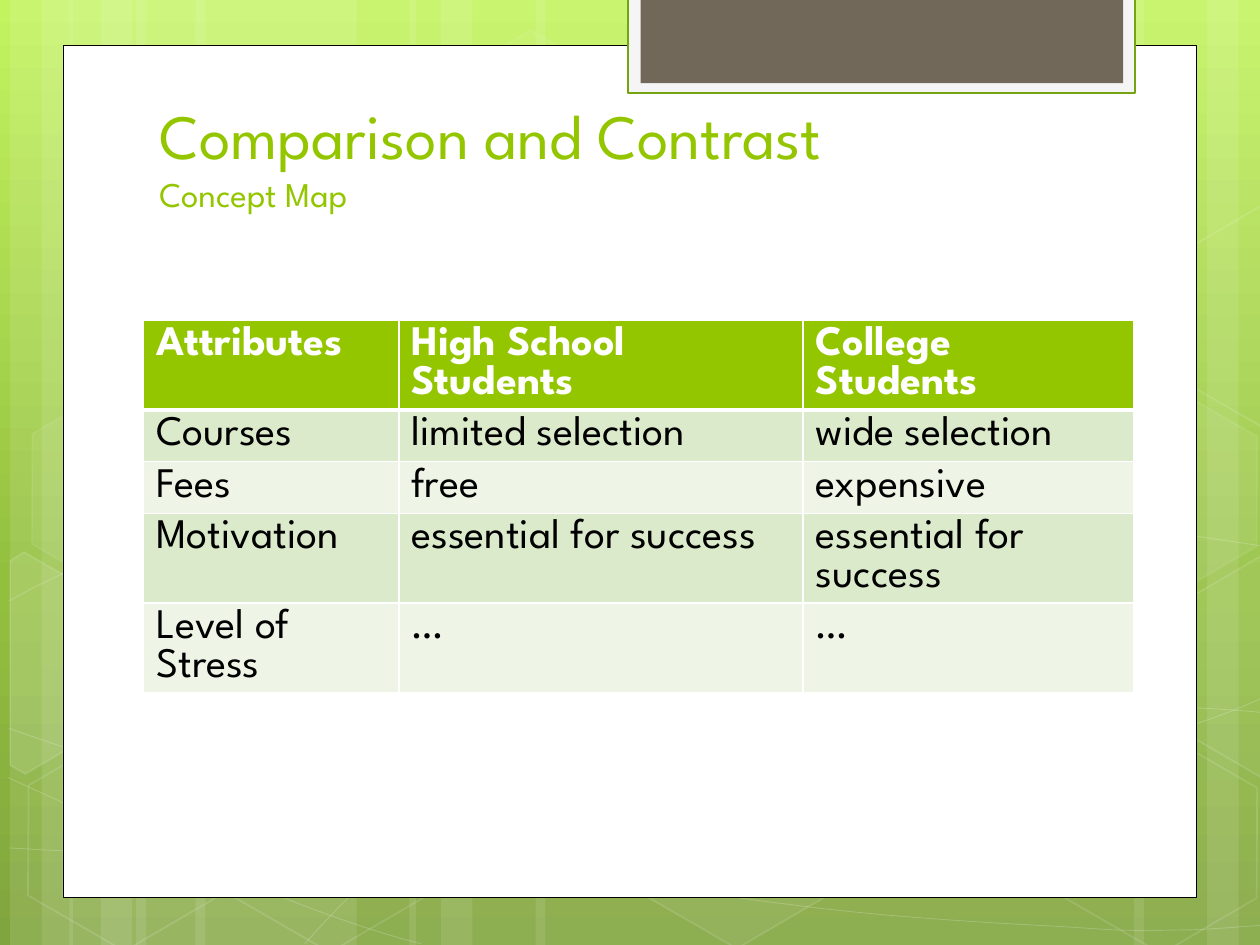
"""Build a green comparison slide with a titled concept map table."""
import copy
import math

import lxml.etree
import pptx
import pptx.dml.color
import pptx.enum.shapes
import pptx.enum.text
import pptx.oxml.ns
import pptx.util

FONT = "League Spartan"
WHITE, GREEN = "FFFFFF", "94C600"
qn = pptx.oxml.ns.qn
PRESETS = pptx.enum.shapes.MSO_SHAPE

deck = pptx.Presentation()
deck.slide_width, deck.slide_height = pptx.util.Inches(10), pptx.util.Inches(7.5)
column, row = deck.slide_width // 100, deck.slide_height // 75
slide = deck.slides.add_slide(deck.slide_layouts[5])


def paint(fill, color, opacity=100):
    """Give a fill a solid colour with an opacity in percent, or none."""
    if color is None or opacity == 0:
        fill.background()
        return
    fill.solid()
    fill.fore_color.rgb = pptx.dml.color.RGBColor.from_string(color)
    if opacity < 100:
        tint = fill._xPr.find(qn("a:solidFill")).find(qn("a:srgbClr"))
        lxml.etree.SubElement(tint, qn("a:alpha"), val=str(opacity * 1000))


def dress(shape, fill, opacity=100, line=None, weight=1, line_opacity=100):
    """Style the fill and outline of a shape and drop its shadow."""
    shape.shadow.inherit = False
    paint(shape.fill, fill, opacity)
    paint(shape.line.fill, line, line_opacity)
    if line:
        shape.line.width = pptx.util.Pt(weight)


backdrop = slide.background.fill
backdrop.gradient()
backdrop.gradient_angle = 270
stop_list = slide._element.find(".//" + qn("a:gsLst"))
stop_list.append(copy.deepcopy(stop_list[-1]))
for stop, (share, color) in zip(backdrop.gradient_stops, [(0, "C3F35F"), (0.62, "93BF3F"), (1, "81A53E")]):
    stop.position = share
    stop.color.rgb = pptx.dml.color.RGBColor.from_string(color)

stripes = [(10.8, 17.5, 0), (0.8, 5, 0), (3.3, 8.3, 0), (15.5, 17.5, 0), (5.5, 5, 0), (8, 8.3, 0),
           (73.3, 17.5, 180), (95.8, 5, 180), (90, 8.3, 180), (42.5, 30.8, 0), (32.5, 5, 0), (35, 8.3, 0)]
for left, width, turn in stripes:
    stripe = slide.shapes.add_shape(
        PRESETS.RECTANGLE, int(left * column), 0, int(width * column), deck.slide_height)
    stripe.rotation = turn
    dress(stripe, WHITE, 10)

waves = [
    [(0.7, 67.3), (6.1, 67.6), (11.5, 67.9), (19, 67.8), (26.5, 67.7), (35.8, 67.5), (45.8, 66.5),
     (55.8, 65.5), (70, 63.6), (79.2, 61.7), (88.3, 59.8), (97.7, 56.8), (100.7, 55.1)],
    [(0.7, 47.7), (3.6, 46.1), (6.5, 44.6), (12.1, 43.1), (17.8, 41.6), (25.9, 39.4), (34.7, 38.7),
     (43.6, 38), (54.4, 37.9), (65.4, 38.7), (76.4, 39.5), (94.7, 42.6), (100.7, 43.4)],
    [(0.6, 61.7), (12.7, 67.2), (24.7, 72.7), (33.4, 74.9)],
    [(0.7, 57.8), (3.8, 58.9), (7, 60), (12.8, 61.6), (18.6, 63.1), (27.3, 65.6), (35.7, 67.3),
     (44, 69), (54.5, 70.8), (62.8, 71.8), (71.1, 72.9), (80, 73.3), (85.3, 73.6),
     (90.5, 74), (91.9, 73.8), (94.5, 73.8), (97.1, 73.7), (98.9, 73.5), (100.7, 73.4)],
    [(24.2, 74.9), (26, 72.9), (27.8, 70.9), (30.2, 69.1), (32.6, 67.3), (36, 65.3), (38.8, 63.9),
     (41.6, 62.5), (43.3, 61.9), (47, 60.9), (50.6, 59.9), (57.3, 58.5), (60.8, 57.8),
     (64.4, 57.1), (64.9, 57.1), (68, 56.9), (71.1, 56.6), (76, 56.3), (79.4, 56.2),
     (82.9, 56.1), (88.6, 56.2), (88.6, 56.2), (90.8, 56.2), (93.1, 56.2), (95.3, 56.2),
     (97.1, 56.3), (98.8, 56.4), (100.6, 56.6)],
]
for wave in waves:
    start, *bends = [(x * column, y * row) for x, y in wave]
    builder = slide.shapes.build_freeform(*start)
    builder.add_line_segments(bends, close=False)
    curve = builder.convert_to_shape()
    segments = list(curve._element.iter(qn("a:lnTo")))
    for first in range(0, len(segments), 3):
        bezier = segments[first].makeelement(qn("a:cubicBezTo"), {})
        segments[first].addprevious(bezier)
        for segment in segments[first:first + 3]:
            bezier.append(segment[0])
            segment.getparent().remove(segment)
    dress(curve, None, line=WHITE, weight=0.5, line_opacity=20)

hexagons = [(33.4, 3.6, 4, 8), (49.7, 58.9, 6, 12), (1.1, 59.1, 0, 12), (1.4, 31.2, 7, 8),
            (17.4, 59.2, 0, 12), (75.3, 45.3, 10, 12), (83.4, 59.3, 0, 12), (83.4, 31.4, 7, 8)]
for left, top, opacity, line_opacity in hexagons:
    hexagon = slide.shapes.add_shape(
        PRESETS.HEXAGON, int(left * column), int(top * row), int(17.5 * column), int(15.2 * row))
    hexagon.rotation = 30
    hexagon.adjustments[0] = 0.285
    dress(hexagon, WHITE, opacity, WHITE, 1, line_opacity)

cut_hexagons = [
    ((3.6, 53.5), [(0.8, 44.5), (1.9, 43.8), (9.6, 48.2), (9.5, 57), (2, 61.4), (0.8, 60.7)], 10),
    ((98.5, 52), [(92.6, 48.5), (100.1, 44.1), (100.9, 44.6), (100.9, 61.3), (100.2, 61.7), (92.6, 57.3)], 4),
    ((98.5, 24.1), [(92.6, 20.7), (100.1, 16.3), (101, 16.8), (100.9, 33.5), (100.2, 33.9), (92.6, 29.5)], 0),
]
cosine, sine = math.cos(math.radians(30)), math.sin(math.radians(30))
for (middle, centre), corners, opacity in cut_hexagons:
    offsets = [(x - middle, y - centre) for x, y in corners]
    start, *rest = [((middle + x * cosine + y * sine) * column, (centre - x * sine + y * cosine) * row)
                    for x, y in offsets]
    builder = slide.shapes.build_freeform(*start)
    builder.add_line_segments(rest, close=True)
    cut_hexagon = builder.convert_to_shape()
    cut_hexagon.rotation = 30
    dress(cut_hexagon, WHITE, opacity, WHITE, 1, 12)

panels = [(5, 3.6, 90, 67.65, WHITE, "000000", 0.5),
          (49.85, -0.2, 40.2, 7.6, "F5F5F5", "74A510", 1.25),
          (50.85, -0.2, 38.3, 6.8, "71685A", None, 0)]
for left, top, width, height, color, edge, weight in panels:
    panel = slide.shapes.add_shape(
        PRESETS.RECTANGLE, int(left * column), int(top * row), int(width * column), int(height * row))
    dress(panel, color, line=edge, weight=weight)

heading = slide.shapes.title
slide.shapes._spTree.append(heading._element)
heading.left, heading.top = int(11.65 * column), int(8.3 * row)
heading.width, heading.height = int(76.8 * column), int(9.2 * row)
heading.text_frame.auto_size = pptx.enum.text.MSO_AUTO_SIZE.NONE
heading.text_frame.vertical_anchor = pptx.enum.text.MSO_ANCHOR.BOTTOM
heading_lines = heading.text_frame.paragraphs[0]
heading_lines.alignment = pptx.enum.text.PP_ALIGN.LEFT
for wording, size in [("Comparison and Contrast", 36), ("Concept Map", 19.8)]:
    if heading_lines.runs:
        heading_lines.add_line_break()
    run = heading_lines.add_run()
    run.text = wording
    run.font.name, run.font.size = FONT, pptx.util.Pt(size)
    paint(run.font.fill, GREEN)

comparison = [
    ("Attributes", "High School Students", "College Students"),
    ("Courses", "limited selection", "wide selection"),
    ("Fees", "free", "expensive"),
    ("Motivation", "essential for success", "essential for success"),
    ("Level of Stress", "…", "…"),
]
concept_map = slide.shapes.add_table(
    len(comparison), 3, int(11.4 * column), int(25.4 * row), int(78.6 * column), int(20.5 * row)).table
for attribute, width in zip(concept_map.columns, (20.25, 32.1, 26.2)):
    attribute.width = int(width * column)
for index, entries in enumerate(comparison):
    band = GREEN if index == 0 else ("EEF5E7", "DCEACC")[index % 2]
    for cell, wording in zip(concept_map.rows[index].cells, entries):
        edges = [("L", 1), ("R", 1), ("T", 3 if index == 1 else 1), ("B", 3 if index == 0 else 1)]
        for side, weight in edges:
            border = lxml.etree.SubElement(
                cell._tc.get_or_add_tcPr(), qn("a:ln" + side), w=str(pptx.util.Pt(weight)))
            ink = lxml.etree.SubElement(border, qn("a:solidFill"))
            lxml.etree.SubElement(ink, qn("a:srgbClr"), val=WHITE)
        paint(cell.fill, band)
        run = cell.text_frame.paragraphs[0].add_run()
        run.text = wording
        run.font.name, run.font.size = FONT, pptx.util.Pt(24)
        run.font.bold = index == 0
        paint(run.font.fill, WHITE if index == 0 else "000000")

deck.save("out.pptx")
